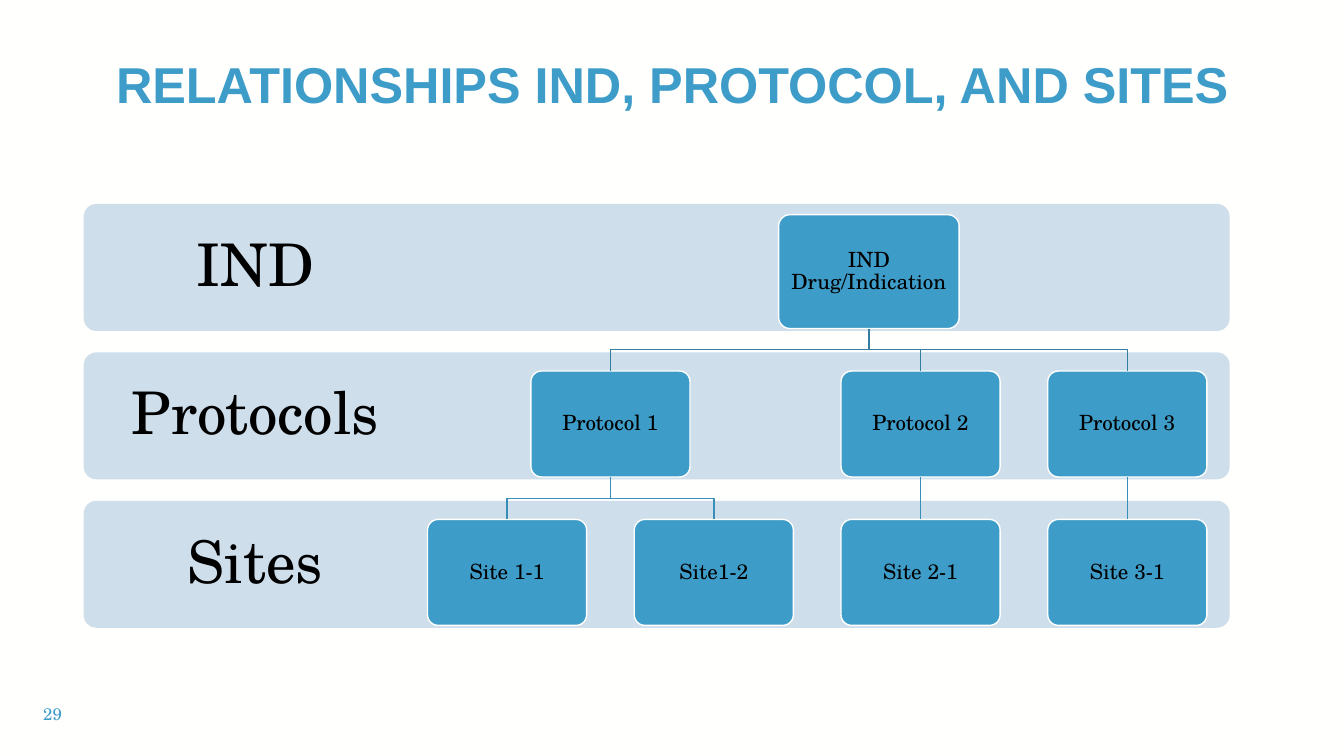
import pptx
import pptx.dml.color
import pptx.enum.shapes
import pptx.enum.text
import pptx.util
from lxml import etree

Cm = pptx.util.Cm
Pt = pptx.util.Pt
SHAPE = pptx.enum.shapes.MSO_SHAPE
ALIGN = pptx.enum.text.PP_ALIGN
SERIF = "TeX Gyre Schola"


def color(value):
    return pptx.dml.color.RGBColor.from_string(value)


def set_text(sp, text, size, font, fill, inset, align=ALIGN.CENTER):
    tf = sp.text_frame
    tf.word_wrap = True
    tf.vertical_anchor = pptx.enum.text.MSO_ANCHOR.MIDDLE
    tf.margin_left = tf.margin_right = Cm(inset)
    tf.margin_top = tf.margin_bottom = Cm(min(inset, 0.13))
    p = tf.paragraphs[0]
    p.text = text
    p.alignment = align
    p.line_spacing = 0.9
    p.font.size = Pt(size)
    p.font.name = font
    p.font.color.rgb = color(fill)
    return p


prs = pptx.Presentation()
prs.slide_width = Cm(33.87)
prs.slide_height = Cm(19.05)
s = prs.slides.add_slide(prs.slide_layouts[6])
s.background.fill.solid()
s.background.fill.fore_color.rgb = color("FFFFFE")

title = s.shapes.add_textbox(Cm(2.11), Cm(0.81), Cm(29.69), Cm(2.79))
p = set_text(title, "RELATIONSHIPS IND, PROTOCOL, AND SITES", 36, "Arial", "3E9CC9", 0.25)
p.font.bold = True

number = s.shapes.add_textbox(Cm(0.84), Cm(17.5), Cm(1.27), Cm(1.02))
set_text(number, "29", 12, SERIF, "3E9CC9", 0.25, ALIGN.LEFT)

BAND_LEFT, BAND_TOP, BAND_PITCH = 2.11, 5.14, 3.74
for row, label in enumerate(["IND", "Protocols", "Sites"]):
    top = Cm(BAND_TOP + row * BAND_PITCH)
    band = s.shapes.add_shape(SHAPE.ROUNDED_RECTANGLE, Cm(BAND_LEFT), top, Cm(28.88), Cm(3.2))
    band.adjustments[0] = 0.1
    band.shadow.inherit = False
    band.fill.solid()
    band.fill.fore_color.rgb = color("CEDEEB")
    band.line.fill.background()
    heading = s.shapes.add_textbox(Cm(BAND_LEFT), top, Cm(8.66), Cm(3.2))
    set_text(heading, label, 42, SERIF, "000000", 0.84)

FIRST_CENTER, COLUMN_PITCH = 12.78, 5.21
ROW_BOXES = [(5.41, 4.55, 2.87), (9.35, 4.01, 2.67), (13.09, 4.01, 2.67)]
nodes = [
    ("IND Drug/Indication", 0, 1.75, None),
    ("Protocol 1", 1, 0.5, "IND Drug/Indication"),
    ("Protocol 2", 1, 2, "IND Drug/Indication"),
    ("Protocol 3", 1, 3, "IND Drug/Indication"),
    ("Site 1-1", 2, 0, "Protocol 1"),
    ("Site1-2", 2, 1, "Protocol 1"),
    ("Site 2-1", 2, 2, "Protocol 2"),
    ("Site 3-1", 2, 3, "Protocol 3"),
]
boxes = {}
for name, row, column, parent in nodes:
    top, width, height = ROW_BOXES[row]
    left = FIRST_CENTER + column * COLUMN_PITCH - width / 2
    sp = s.shapes.add_shape(SHAPE.ROUNDED_RECTANGLE, Cm(left), Cm(top), Cm(width), Cm(height))
    sp.adjustments[0] = 0.1
    sp.shadow.inherit = False
    sp.fill.solid()
    sp.fill.fore_color.rgb = color("3E9CC9")
    sp.line.color.rgb = color("FFFFFE")
    sp.line.width = Pt(1)
    set_text(sp, name, 15, SERIF, "000000", 0.15)
    boxes[name] = sp

for name, row, column, parent in nodes:
    if parent is None:
        continue
    start, end = boxes[parent], boxes[name]
    x1, y1 = start.left + start.width // 2, start.top + start.height
    x2, y2 = end.left + end.width // 2, end.top
    if x1 == x2:
        link = s.shapes.add_connector(pptx.enum.shapes.MSO_CONNECTOR.STRAIGHT, x1, y1, x2, y2)
        link.begin_connect(start, 2)
        link.end_connect(end, 0)
        etree.SubElement(link._element.spPr, pptx.oxml.ns.qn("a:effectLst"))
    else:
        middle = (y1 + y2) // 2
        fb = s.shapes.build_freeform(x1, y1)
        fb.add_line_segments([(x1, middle), (x2, middle), (x2, y2)], close=False)
        link = fb.convert_to_shape()
        link.fill.background()
        link.shadow.inherit = False
    link.line.color.rgb = color("327DA1" if row == 1 else "388EB6")
    link.line.width = Pt(1)

prs.save("out.pptx")
